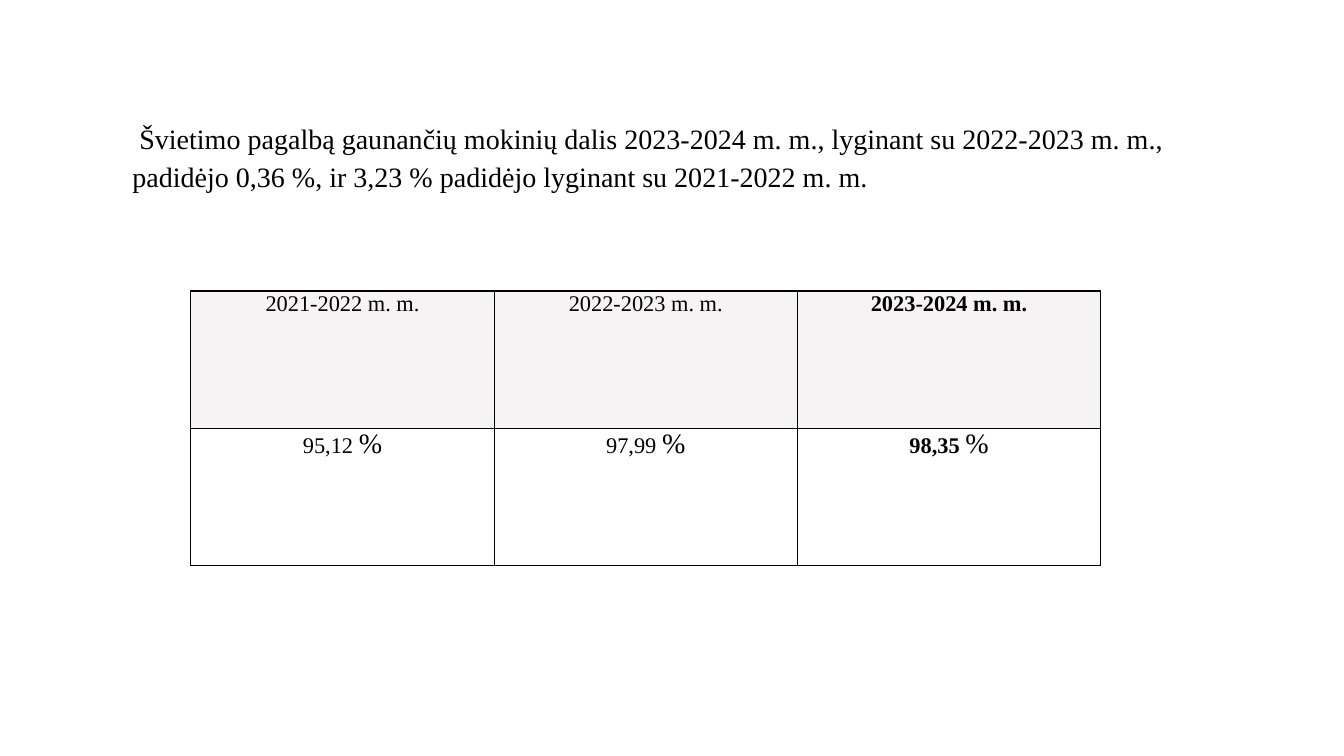
import pptx
import pptx.dml.color
import pptx.enum.text
import pptx.oxml.ns
import pptx.util
from lxml import etree

RGBColor = pptx.dml.color.RGBColor
BLACK = RGBColor(0x00, 0x00, 0x00)
GREY = RGBColor(0xF5, 0xF3, 0xF3)
WHITE = RGBColor(0xFF, 0xFF, 0xFF)
FONT = "Times New Roman"
WIDE, HIGH = pptx.util.Inches(13.33), pptx.util.Inches(7.5)
ALIGN = pptx.enum.text.PP_ALIGN

TITLE = ("\u00a0Švietimo pagalbą gaunančių mokinių dalis 2023-2024 m. m., "
         "lyginant su 2022-2023 m. m., padidėjo 0,36 %, ir 3,23 % padidėjo "
         "lyginant su 2021-2022 m. m.").replace("\u00a0", " ")
YEARS = ["2021-2022 m. m.", "2022-2023 m. m.", "2023-2024 m. m."]
SHARES = ["95,12 ", "97,99 ", "98,35 "]


def share(left, top, width, height):
    """Turn shares of the slide's size into lengths."""
    return [int(part * side) for part, side in
            zip((left, top, width, height), (WIDE, HIGH, WIDE, HIGH))]


def add_run(para, text, size, bold=False):
    run = para.add_run()
    run.text = text
    run.font.name = FONT
    run.font.size = pptx.util.Pt(size)
    run.font.bold = bold
    run.font.color.rgb = BLACK


def add_title(slide):
    title = slide.shapes.title
    title.left, title.top, title.width, title.height = share(
        0.091, 0.147, 0.837, 0.79)
    frame = title.text_frame
    frame.word_wrap = True
    frame.auto_size = pptx.enum.text.MSO_AUTO_SIZE.NONE
    frame.vertical_anchor = pptx.enum.text.MSO_ANCHOR.TOP
    para = frame.paragraphs[0]
    para.alignment = ALIGN.LEFT
    para.line_spacing = 1.15
    para.space_after = pptx.util.Pt(8)
    add_run(para, TITLE, 20)


def add_edges(cell):
    """Draw a thin black line on each side of the cell."""
    qn = pptx.oxml.ns.qn
    props = cell._tc.get_or_add_tcPr()
    for side in ("lnL", "lnR", "lnT", "lnB"):
        line = etree.SubElement(props, qn("a:" + side), w=str(pptx.util.Pt(1)))
        fill = etree.SubElement(line, qn("a:solidFill"))
        etree.SubElement(fill, qn("a:srgbClr"), val=str(BLACK))


def fill_cell(cell, color, runs):
    add_edges(cell)
    cell.fill.solid()
    cell.fill.fore_color.rgb = color
    cell.margin_left = cell.margin_right = pptx.util.Inches(0.07)
    cell.margin_top = cell.margin_bottom = 0
    para = cell.text_frame.paragraphs[0]
    para.alignment = ALIGN.CENTER
    para.space_after = pptx.util.Pt(8)
    for run in runs:
        add_run(para, *run)


def add_grid(slide):
    place = share(0.142, 0.385, 0.677, 0.363)
    table = slide.shapes.add_table(2, len(YEARS), *place).table
    for col, (year, value) in enumerate(zip(YEARS, SHARES)):
        last = col == len(YEARS) - 1
        fill_cell(table.cell(0, col), GREY, [(year, 16, last)])
        fill_cell(table.cell(1, col), WHITE, [(value, 16, last), ("%", 20)])


def main():
    deck = pptx.Presentation()
    deck.slide_width, deck.slide_height = WIDE, HIGH
    slide = deck.slides.add_slide(deck.slide_layouts.get_by_name("Title Only"))
    add_title(slide)
    add_grid(slide)
    deck.save("out.pptx")


if __name__ == "__main__":
    main()
